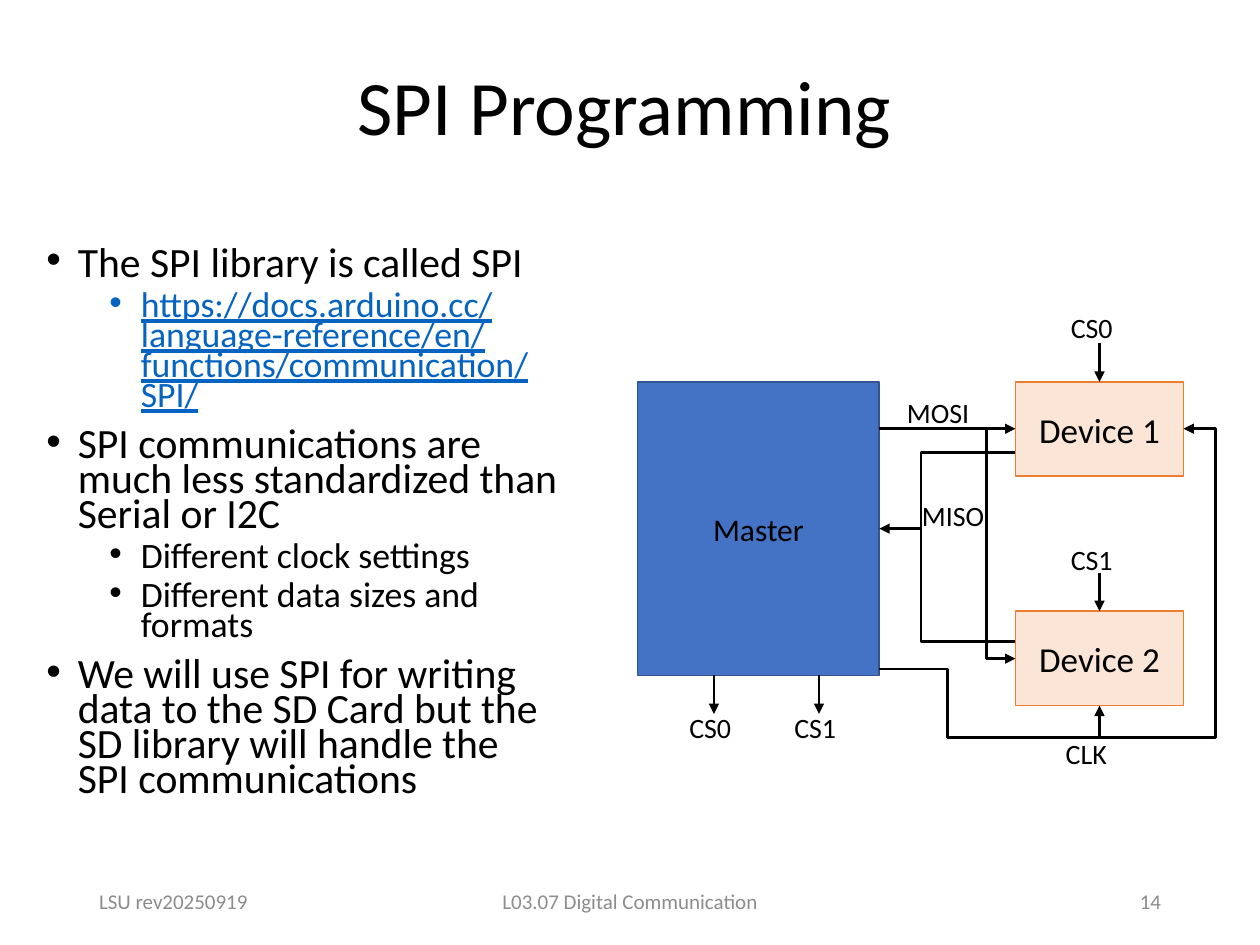
import pptx
import pptx.dml.color
import pptx.enum.shapes
import pptx.enum.text
import pptx.oxml
import pptx.oxml.ns
import pptx.util
from lxml import etree

Pt = pptx.util.Pt
qn = pptx.oxml.ns.qn
ALIGN = pptx.enum.text.PP_ALIGN
ANCHOR = pptx.enum.text.MSO_ANCHOR
CONNECTOR = pptx.enum.shapes.MSO_CONNECTOR
BLACK, GREY, LINK_BLUE = "000000", "8C8C8C", "0563C1"


def rgb(value):
    return pptx.dml.color.RGBColor.from_string(value)


def apply(target, values):
    for attribute, value in values.items():
        setattr(target, attribute, value)


class Deck:
    """Holds the text style and the current slide; draws its elements."""

    font = "Calibri"
    wire_width = 1.5
    bullet_levels = (
        {"size": 23.8, "margin": 18, "before": 10},
        {"size": 20.4, "margin": 54, "before": 5},
    )

    def __init__(self, slide):
        self.slide = slide

    def add_words(self, paragraph, text, size, color=BLACK, **font_values):
        run = paragraph.add_run()
        run.text = text
        apply(run.font, {"name": self.font, "size": Pt(size), **font_values})
        run.font.color.rgb = rgb(color)

    def frame(self, left, top, width, height, **frame_values):
        box = self.slide.shapes.add_textbox(Pt(left), Pt(top), Pt(width), Pt(height))
        apply(box.text_frame, {"word_wrap": True, **frame_values})
        return box.text_frame

    def text(self, area, text, size, color=BLACK, align=ALIGN.CENTER, spacing=1.0):
        frame = self.frame(*area, vertical_anchor=ANCHOR.MIDDLE)
        apply(frame.paragraphs[0], {"alignment": align, "line_spacing": spacing})
        self.add_words(frame.paragraphs[0], text, size, color)

    def label(self, left, top, width, text):
        frame = self.frame(
            left, top, width, 26.6, word_wrap=False,
            auto_size=pptx.enum.text.MSO_AUTO_SIZE.SHAPE_TO_FIT_TEXT)
        self.add_words(frame.paragraphs[0], text, 16)

    def bullets(self, area, items):
        frame = self.frame(*area)
        for index, (level, text, font_values) in enumerate(items):
            style = self.bullet_levels[level]
            paragraph = frame.add_paragraph() if index else frame.paragraphs[0]
            properties = paragraph._p.get_or_add_pPr()
            properties.set("marL", str(Pt(style["margin"])))
            properties.set("indent", str(Pt(-18)))
            etree.SubElement(properties, qn("a:buFont")).set("typeface", "Arial")
            etree.SubElement(properties, qn("a:buChar")).set("char", "•")
            before = Pt(style["before"] if index else 0)
            apply(paragraph, {"level": level, "line_spacing": 0.7,
                              "space_before": before})
            self.add_words(paragraph, text, style["size"], **font_values)

    def block(self, area, text, size, fill, outline):
        left, top, width, height = area
        block = self.slide.shapes.add_shape(
            pptx.enum.shapes.MSO_SHAPE.RECTANGLE,
            Pt(left), Pt(top), Pt(width), Pt(height))
        block.shadow.inherit = False
        block.fill.solid()
        block.fill.fore_color.rgb = rgb(fill)
        block.line.color.rgb = rgb(outline)
        block.line.width = Pt(1)
        block.text_frame.vertical_anchor = ANCHOR.MIDDLE
        paragraph = block.text_frame.paragraphs[0]
        paragraph.alignment = ALIGN.CENTER
        self.add_words(paragraph, text, size)

    def wire(self, start, end, bends=None, arrow="tailEnd"):
        """Draw a straight wire, or an elbow leaving sideways; bends are the
        x, then y, of its free inner segments."""
        kind = CONNECTOR.STRAIGHT if bends is None else CONNECTOR.ELBOW
        wire = self.slide.shapes.add_connector(
            kind, *(Pt(value) for value in (*start, *end)))
        wire.line.color.rgb = rgb(BLACK)
        wire.line.width = Pt(self.wire_width)
        properties = wire._element.spPr
        if bends is not None:
            geometry = properties.find(qn("a:prstGeom"))
            geometry.set("prst", f"bentConnector{len(bends) + 2}")
            guides = geometry.find(qn("a:avLst"))
            if guides is None:
                guides = etree.SubElement(geometry, qn("a:avLst"))
            for number, (first, last, bend) in enumerate(zip(start, end, bends), 1):
                share = round((bend - first) / (last - first) * 100000)
                guide = etree.SubElement(guides, qn("a:gd"))
                guide.set("name", f"adj{number}")
                guide.set("fmla", f"val {share}")
        if arrow:
            outline = properties.find(qn("a:ln"))
            etree.SubElement(outline, qn(f"a:{arrow}")).set("type", "triangle")
        etree.SubElement(properties, qn("a:effectLst"))


def draw_bus(deck):
    master_left, master_top, master_width, master_height = 364.3, 218.2, 138.2, 167.8
    master_right = master_left + master_width
    master_bottom = master_top + master_height
    device_left, device_width, device_height = 580.3, 96, 54
    device_right = device_left + device_width
    device_middle = device_left + device_width / 2
    device_tops = (master_top, 349.2)
    mosi_y, mosi_x = 245, 563.8
    miso_x, miso_y = 526.3, 302.1
    clock_x, clock_y = 541.4, 421.5

    deck.block((master_left, master_top, master_width, master_height),
               "Master", 18, "4472C4", "325491")
    for number, (top, label_top) in enumerate(zip(device_tops, (174.2, 306.7))):
        deck.block((device_left, top, device_width, device_height),
                   f"Device {number + 1}", 20, "FBE5D6", "ED7D31")
        deck.wire((device_middle, top - 22), (device_middle, top))
        deck.label(604.8, label_top, 42.5, f"CS{number}")

    for number, select_x in enumerate((408, 468)):
        deck.wire((select_x, master_bottom), (select_x, master_bottom + 22))
        deck.label(select_x - 21.2, 402.5, 42.5, f"CS{number}")

    deck.wire((master_right, mosi_y), (device_left, mosi_y))
    deck.wire((device_left, 376.4), (mosi_x, mosi_y), bends=(), arrow="headEnd")
    deck.label(511.2, 222.5, 54.7, "MOSI")

    deck.wire((device_left, 258.5), (master_right, miso_y), bends=(miso_x,))
    deck.wire((device_left, 366.7), (miso_x, miso_y), bends=(), arrow=None)
    deck.label(519.8, 281.5, 50.4, "MISO")

    deck.wire((master_right, 382.3), (device_middle, device_tops[1] + device_height),
              bends=(clock_x, clock_y))
    deck.wire((device_middle, clock_y), (device_right, mosi_y), bends=(694.8,))
    deck.label(601.9, 417.6, 46.8, "CLK")


def main():
    presentation = pptx.Presentation()
    presentation.slide_width, presentation.slide_height = Pt(720), Pt(540)
    deck = Deck(presentation.slides.add_slide(presentation.slide_layouts[6]))

    deck.text((124.5, 10.8, 465, 104.4), "SPI Programming", 44, spacing=0.9)
    deck.bullets((19.4, 139, 306, 342.7), (
        (0, "The SPI library is called SPI", {}),
        (1, "https://docs.arduino.cc/language-reference/en/functions/communication/SPI/",
         {"color": LINK_BLUE, "underline": True}),
        (0, "SPI communications are much less standardized than Serial or I2C", {}),
        (1, "Different clock settings", {}),
        (1, "Different data sizes and formats", {}),
        (0, "We will use SPI for writing data to the SD Card but the SD library "
            "will handle the SPI communications", {}),
    ))
    draw_bus(deck)
    for left, width, text, align in (
        (49.5, 162, "LSU rev20250919", ALIGN.LEFT),
        (238.5, 243, "L03.07 Digital Communication", ALIGN.CENTER),
        (508.5, 162, "14", ALIGN.RIGHT),
    ):
        deck.text((left, 500.5, width, 28.8), text, 12, GREY, align)
    presentation.save("out.pptx")


if __name__ == "__main__":
    main()
